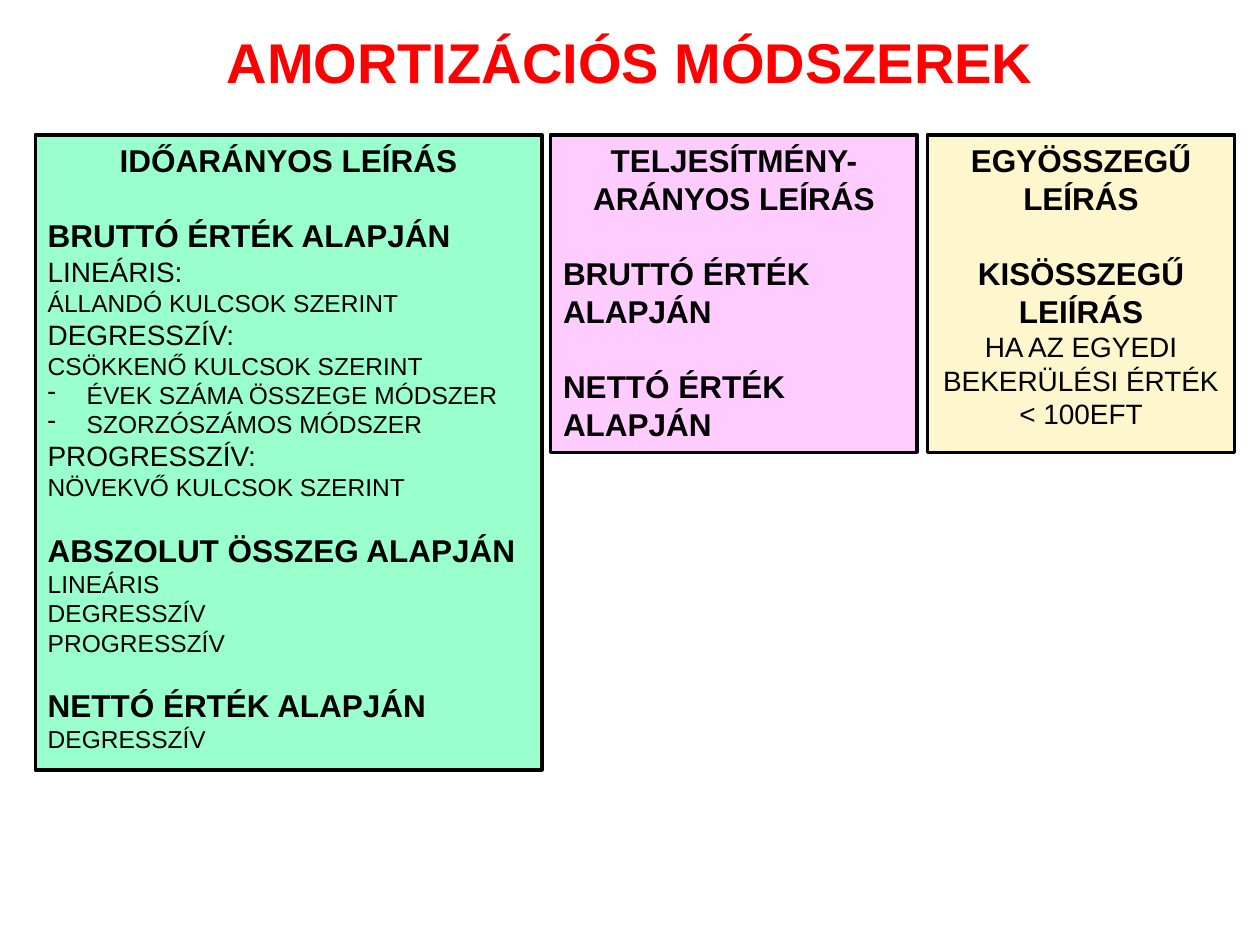
from pptx import Presentation
from pptx.dml.color import RGBColor
from pptx.enum.shapes import MSO_SHAPE
from pptx.enum.text import MSO_ANCHOR, PP_ALIGN
from pptx.oxml.ns import qn
from pptx.util import Inches, Pt
from lxml import etree

RECTANGLE = MSO_SHAPE.RECTANGLE
LEFT, CENTER = PP_ALIGN.LEFT, PP_ALIGN.CENTER
TOP, MIDDLE = MSO_ANCHOR.TOP, MSO_ANCHOR.MIDDLE

COLORS = {"title": "FF0000", "ink": "000000", "time": "99FFCC",
          "output": "FFCCFF", "single": "FEF7CE"}
FONT = "Arial"
LINE_HEIGHT = 1.19
BOX_TOP = 1.07

HEADING = {"size": 18, "bold": True}
CENTERED = {**HEADING, "align": CENTER}
METHOD = {"size": 16}
DETAIL = {"size": 14}
DASHED = {**DETAIL, "bullet": "-"}

TITLE = "AMORTIZÁCIÓS MÓDSZEREK"
BOXES = [
    {"color": "time", "left": 0.28, "width": 4.02, "height": 5.04, "lines": [
        ("IDŐARÁNYOS LEÍRÁS", CENTERED),
        ("BRUTTÓ ÉRTÉK ALAPJÁN", {**HEADING, "gap": 18}),
        ("LINEÁRIS:", METHOD),
        ("ÁLLANDÓ KULCSOK SZERINT", DETAIL),
        ("DEGRESSZÍV:", METHOD),
        ("CSÖKKENŐ KULCSOK SZERINT", DETAIL),
        ("ÉVEK SZÁMA ÖSSZEGE MÓDSZER", DASHED),
        ("SZORZÓSZÁMOS MÓDSZER", DASHED),
        ("PROGRESSZÍV:", METHOD),
        ("NÖVEKVŐ KULCSOK SZERINT", DETAIL),
        ("ABSZOLUT ÖSSZEG ALAPJÁN", {**HEADING, "gap": 14}),
        ("LINEÁRIS", DETAIL),
        ("DEGRESSZÍV", DETAIL),
        ("PROGRESSZÍV", DETAIL),
        ("NETTÓ ÉRTÉK ALAPJÁN", {**HEADING, "gap": 14}),
        ("DEGRESSZÍV", DETAIL)]},
    {"color": "output", "left": 4.37, "width": 2.91, "height": 2.52, "lines": [
        ("TELJESÍTMÉNY-ARÁNYOS LEÍRÁS", CENTERED),
        ("BRUTTÓ ÉRTÉK ALAPJÁN", {**HEADING, "gap": 18}),
        ("NETTÓ ÉRTÉK ALAPJÁN", {**HEADING, "gap": 18})]},
    {"color": "single", "left": 7.36, "width": 2.44, "height": 2.52, "lines": [
        ("EGYÖSSZEGŰ LEÍRÁS", CENTERED),
        ("KISÖSSZEGŰ LEIÍRÁS", {**CENTERED, "gap": 18}),
        ("HA AZ EGYEDI BEKERÜLÉSI ÉRTÉK < 100EFT", {**METHOD, "align": CENTER})]},
]


def rgb(name):
    return RGBColor.from_string(COLORS[name])


def write(para, text, size, bold=False, color="ink", align=LEFT, gap=0, bullet=None):
    para.alignment = align
    para.space_before = Pt(round(gap * LINE_HEIGHT, 1))
    span = para.add_run()
    span.text = text
    span.font.name = FONT
    span.font.size = Pt(size)
    span.font.bold = bold
    span.font.color.rgb = rgb(color)
    if bullet:
        properties = para._p.get_or_add_pPr()
        properties.set("marL", str(Inches(0.31)))
        properties.set("indent", str(-Inches(0.31)))
        etree.SubElement(properties, qn("a:buChar")).set("char", bullet)


def add_box(slide, color, left, width, height, lines):
    box = slide.shapes.add_shape(RECTANGLE, Inches(left), Inches(BOX_TOP),
                                 Inches(width), Inches(height))
    box.shadow.inherit = False
    box.fill.solid()
    box.fill.fore_color.rgb = rgb(color)
    box.line.color.rgb = rgb("ink")
    box.line.width = Pt(2)
    frame = box.text_frame
    frame.word_wrap = True
    frame.vertical_anchor = TOP
    for index, (text, style) in enumerate(lines):
        para = frame.add_paragraph() if index else frame.paragraphs[0]
        write(para, text, **style)


def main():
    """Build the slide on depreciation methods."""
    deck = Presentation()
    deck.slide_width, deck.slide_height = Inches(10), Inches(7.5)
    slide = deck.slides.add_slide(deck.slide_layouts[5])
    title = slide.shapes.title
    title.left, title.top = Inches(0.5), Inches(0.05)
    title.width, title.height = Inches(9), Inches(0.87)
    title.text_frame.vertical_anchor = MIDDLE
    write(title.text_frame.paragraphs[0], TITLE, size=32, bold=True,
          color="title", align=CENTER)
    for box in BOXES:
        add_box(slide, **box)
    deck.save("out.pptx")


if __name__ == "__main__":
    main()
